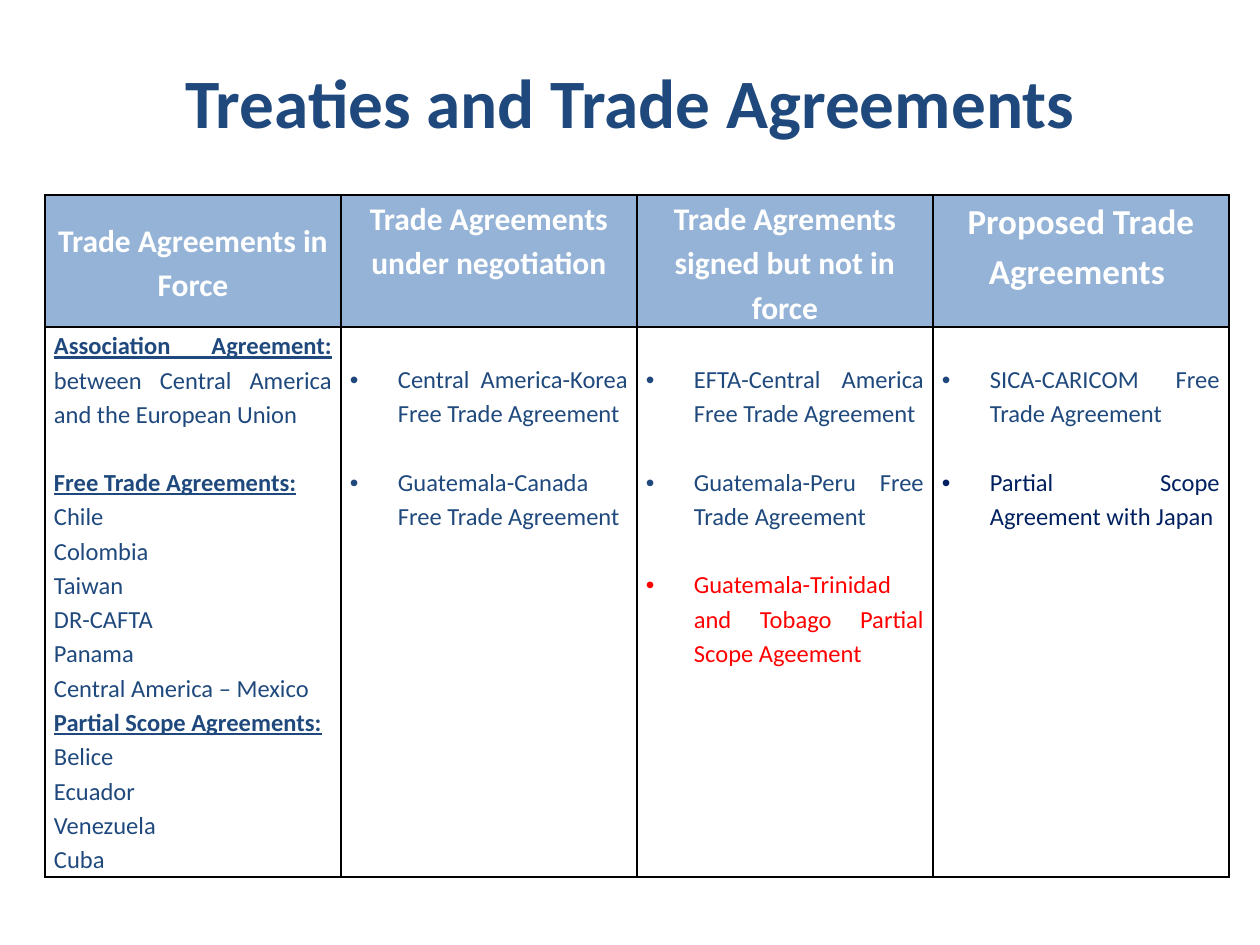
from lxml import etree
from pptx import Presentation
from pptx.dml.color import RGBColor
from pptx.enum.text import MSO_ANCHOR, PP_ALIGN
from pptx.oxml.ns import qn
from pptx.util import Emu, Pt

CENTER, JUSTIFY = PP_ALIGN.CENTER, PP_ALIGN.JUSTIFY
MIDDLE, TOP = MSO_ANCHOR.MIDDLE, MSO_ANCHOR.TOP

COLORS = {"navy": "1F497D", "dark": "002060", "red": "FF0000",
          "header": "95B3D7", "white": "FFFFFF", "border": "000000"}
FONT = "Calibri"

# Content
TITLE = "Treaties and Trade Agreements"
HEADERS = [  # text, size, anchor
    ("Trade Agreements in Force", 18, MIDDLE),
    ("Trade Agreements under negotiation", 18, TOP),
    ("Trade Agrements signed but not in force", 18, TOP),
    ("Proposed Trade Agreements ", 20, TOP),
]
IN_FORCE = [  # heading, text on the same line, members, gap before
    ("Association Agreement: ", "between Central America and the European Union", [], False),
    ("Free Trade Agreements:", "",
     ["Chile", "Colombia", "Taiwan", "DR-CAFTA", "Panama", "Central America – Mexico"], True),
    ("Partial Scope Agreements:", "", ["Belice", "Ecuador", "Venezuela", "Cuba"], False),
]
BULLET_COLUMNS = [
    [("Central America-Korea Free Trade Agreement", "navy"),
     ("Guatemala-Canada Free Trade Agreement", "navy")],
    [("EFTA-Central America Free Trade Agreement", "navy"),
     ("Guatemala-Peru Free Trade Agreement", "navy"),
     ("Guatemala-Trinidad and Tobago Partial Scope Ageement", "red")],
    [("SICA-CARICOM Free Trade Agreement", "navy"),
     ("Partial Scope Agreement with Japan", "dark")],
]

# Layout in px
SCALE = 914400 // 126
SLIDE_W, SLIDE_H = 1260, 945
TITLE_BOX = (63, 38, 1134, 157)
TITLE_LIFT = 32
TABLE_LEFT, TABLE_TOP, COLUMN_W = 45, 195, 296
ROW_HEIGHTS = (132, 550)
SIDE_INSET, LINE_GAP, INDENT = 9, 34, 48


def px(n):
    return Emu(n * SCALE)


def rgb(name):
    return RGBColor.from_string(COLORS[name])


def add_run(paragraph, text, size, color, bold=False, underline=False):
    run = paragraph.add_run()
    run.text = text
    font = run.font
    font.name, font.size, font.bold, font.underline = FONT, Pt(size), bold, underline
    font.color.rgb = rgb(color)


def next_paragraph(frame, align, gap=False):
    first = frame.paragraphs[0]
    paragraph = frame.add_paragraph() if first.runs else first
    paragraph.alignment = align
    paragraph.line_spacing = 1.15
    if gap:
        paragraph.space_before = px(LINE_GAP)
    return paragraph


def add_bullet(paragraph):
    props = paragraph._p.get_or_add_pPr()
    props.set("marL", str(px(INDENT)))
    props.set("indent", str(-px(INDENT)))
    etree.SubElement(props, qn("a:buFont"), typeface="Arial")
    etree.SubElement(props, qn("a:buChar"), char="•")


def add_borders(cell):
    props = cell._tc.get_or_add_tcPr()
    for position, side in enumerate(("lnL", "lnR", "lnT", "lnB")):
        line = etree.Element(qn(f"a:{side}"), w=str(Pt(1)))
        fill = etree.SubElement(line, qn("a:solidFill"))
        etree.SubElement(fill, qn("a:srgbClr"), val=COLORS["border"])
        props.insert(position, line)


prs = Presentation()
prs.slide_width, prs.slide_height = px(SLIDE_W), px(SLIDE_H)
slide = prs.slides.add_slide(prs.slide_layouts[6])

# Title
title = slide.shapes.add_textbox(*map(px, TITLE_BOX)).text_frame
title.word_wrap = True
title.vertical_anchor = MIDDLE
title.margin_top, title.margin_bottom = 0, px(TITLE_LIFT)
title.paragraphs[0].alignment = CENTER
add_run(title.paragraphs[0], TITLE, 39.6, "navy", bold=True)

# Table grid
agreements = slide.shapes.add_table(
    len(ROW_HEIGHTS), len(HEADERS), px(TABLE_LEFT), px(TABLE_TOP),
    px(COLUMN_W * len(HEADERS)), px(sum(ROW_HEIGHTS))).table
agreements.first_row = agreements.horz_banding = False
for column in agreements.columns:
    column.width = px(COLUMN_W)
for row, height in zip(agreements.rows, ROW_HEIGHTS):
    row.height = px(height)
for cell in agreements.iter_cells():
    cell.margin_left = cell.margin_right = px(SIDE_INSET)
    cell.margin_top = cell.margin_bottom = 0
    cell.fill.background()
    add_borders(cell)

# Header row
for column, (text, size, anchor) in enumerate(HEADERS):
    cell = agreements.cell(0, column)
    cell.fill.solid()
    cell.fill.fore_color.rgb = rgb("header")
    cell.vertical_anchor = anchor
    paragraph = next_paragraph(cell.text_frame, CENTER)
    paragraph.space_after = Pt(10)
    add_run(paragraph, text, size, "white", bold=True)

# Agreements in force
in_force = agreements.cell(1, 0).text_frame
for heading, text, members, gap in IN_FORCE:
    paragraph = next_paragraph(in_force, JUSTIFY, gap)
    add_run(paragraph, heading, 14, "navy", bold=True, underline=True)
    if text:
        add_run(paragraph, text, 14, "navy")
    for member in members:
        add_run(next_paragraph(in_force, JUSTIFY), member, 14, "navy")

# Bulleted columns
for column, items in enumerate(BULLET_COLUMNS, start=1):
    cell = agreements.cell(1, column)
    cell.margin_top = px(LINE_GAP)
    for index, (text, color) in enumerate(items):
        paragraph = next_paragraph(cell.text_frame, JUSTIFY, gap=index > 0)
        add_bullet(paragraph)
        add_run(paragraph, text, 14, color)

prs.save("out.pptx")
